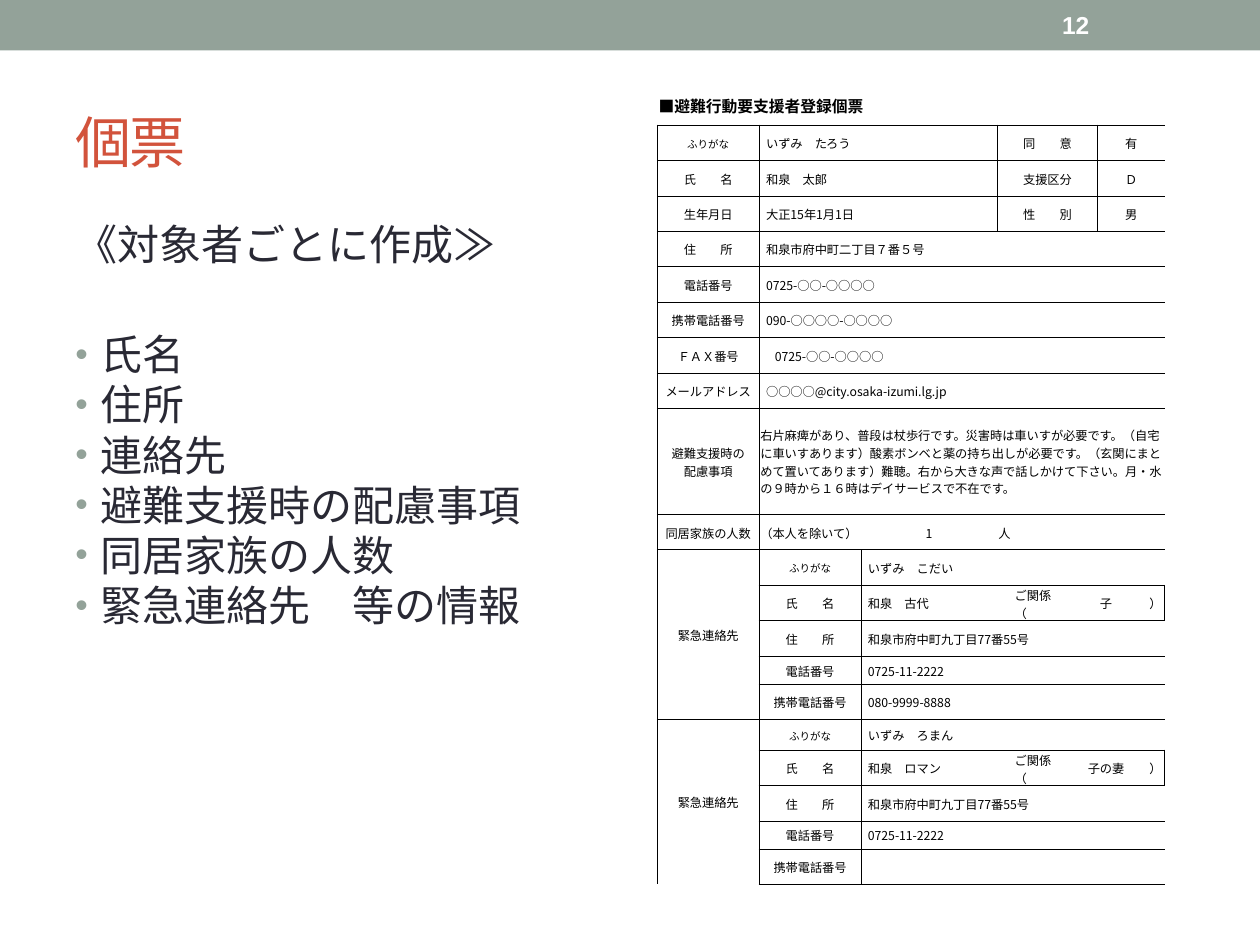
from copy import deepcopy
from dataclasses import dataclass, field
from typing import Any

from lxml import etree
from pptx import Presentation
from pptx.dml.color import RGBColor
from pptx.enum.shapes import MSO_SHAPE
from pptx.enum.text import MSO_ANCHOR, PP_ALIGN
from pptx.oxml.ns import qn
from pptx.util import Pt

RECTANGLE = MSO_SHAPE.RECTANGLE
TOP, MIDDLE = MSO_ANCHOR.TOP, MSO_ANCHOR.MIDDLE
LEFT, CENTER = PP_ALIGN.LEFT, PP_ALIGN.CENTER
SAGE = RGBColor(0x93, 0xA2, 0x99)
RUST = RGBColor(0xD2, 0x53, 0x3C)
INK = RGBColor(0x29, 0x29, 0x34)
BLACK = RGBColor(0x00, 0x00, 0x00)
WHITE = RGBColor(0xFF, 0xFF, 0xFF)
JAPANESE, LATIN = "Noto Sans CJK JP", "Arial"
NO_STYLE = "{2D5ABB26-0587-4C30-8999-92F81FD0307C}"

BODY_SIZE, TABLE_SIZE, SMALL_SIZE = 24, 7, 6
BODY_FORMAT = {"line_spacing": 0.83, "space_before": Pt(4.8)}
FIRST_FORMAT = BODY_FORMAT | {"space_before": Pt(0)}
GAP_FORMAT = BODY_FORMAT | {"space_before": Pt(39.3)}
BULLETS = ["氏名", "住所", "連絡先", "避難支援時の配慮事項", "同居家族の人数", "緊急連絡先　等の情報"]

COLUMNS = [58.2, 58.2, 77.8, 9.4, 28.8, 19.4, 28.8, 9.4]
ROW_HEIGHT = 20.25
SPECIAL_ROWS = {0: 22.5, 9: 60.6, 14: 16, 16: 17.5, 19: 16}
ROW_COUNT = 21
INSET, INDENT, WIDE_INDENT = 0.72, 4, 9
SIDES = "LRTB"


@dataclass
class Line:
    text: str
    size: float
    color: RGBColor
    face: str = JAPANESE
    bold: bool = False
    bullet: bool = False
    spacing: int = 0
    format: dict[str, Any] = field(default_factory=dict)


@dataclass
class Entry:
    row: int
    column: int
    text: str
    columns: int = 1
    rows: int = 1
    align: PP_ALIGN = CENTER
    size: float = TABLE_SIZE
    indent: float = INSET
    sides: str = SIDES
    bold: bool = False


def assign(target: Any, values: dict[str, Any]) -> None:
    for name, value in values.items():
        setattr(target, name, value)


def write(para: Any, line: Line) -> None:
    para.text = line.text
    assign(para, line.format)
    for span in para.runs:
        assign(span.font, {"size": Pt(line.size), "bold": line.bold, "name": line.face})
        span.font.color.rgb = line.color
        properties = span.font._element
        etree.SubElement(properties, qn("a:ea"), typeface=line.face)
        if line.spacing:
            properties.set("spc", str(line.spacing))
    for line_break in para._p.findall(qn("a:br")):
        line_break.append(deepcopy(para.runs[0].font._element))
    if line.bullet:
        add_bullet(para)


def add_bullet(para: Any) -> None:
    properties = para._p.get_or_add_pPr()
    properties.set("marL", str(Pt(14.4)))
    properties.set("indent", str(-Pt(14.4)))
    color = etree.SubElement(properties, qn("a:buClr"))
    etree.SubElement(color, qn("a:srgbClr"), val=str(SAGE))
    etree.SubElement(properties, qn("a:buSzPct"), val="85000")
    etree.SubElement(properties, qn("a:buFont"), typeface=LATIN)
    etree.SubElement(properties, qn("a:buChar"), char="•")


def add_text(page: Any, left: float, top: float, width: float, height: float,
             anchor: MSO_ANCHOR, lines: list[Line]) -> None:
    box = page.shapes.add_textbox(Pt(left), Pt(top), Pt(width), Pt(height))
    frame = box.text_frame
    assign(frame, {"word_wrap": True, "vertical_anchor": anchor})
    for index, line in enumerate(lines):
        write(frame.add_paragraph() if index else frame.paragraphs[0], line)


def add_bar(page: Any) -> None:
    bar = page.shapes.add_shape(RECTANGLE, Pt(0), Pt(0), Pt(720), Pt(28.8))
    bar.shadow.inherit = False
    bar.fill.solid()
    bar.fill.fore_color.rgb = SAGE
    bar.line.fill.background()


def set_borders(cell: Any, sides: str) -> None:
    properties = cell._tc.get_or_add_tcPr()
    for index, side in enumerate(SIDES):
        border = etree.Element(qn(f"a:ln{side}"), w=str(Pt(0.5)))
        if side in sides:
            fill = etree.SubElement(border, qn("a:solidFill"))
            etree.SubElement(fill, qn("a:srgbClr"), val=str(BLACK))
        else:
            etree.SubElement(border, qn("a:noFill"))
        properties.insert(index, border)


def fill_entry(table: Any, entry: Entry) -> None:
    last_row = entry.row + entry.rows - 1
    last_column = entry.column + entry.columns - 1
    for row in range(entry.row, last_row + 1):
        for column in range(entry.column, last_column + 1):
            at_edge = {"L": column == entry.column, "R": column == last_column,
                       "T": row == entry.row, "B": row == last_row}
            cell = table.cell(row, column)
            set_borders(cell, "".join(side for side in entry.sides if at_edge[side]))
    cell = table.cell(entry.row, entry.column)
    if entry.rows * entry.columns > 1:
        cell.merge(table.cell(last_row, last_column))
    cell.margin_left = Pt(entry.indent)
    if entry.text:
        write(cell.text_frame.paragraphs[0],
              Line(entry.text, entry.size, BLACK, bold=entry.bold, format={"alignment": entry.align}))


def value(row: int, column: int, text: str, columns: int, indent: float = INDENT, sides: str = SIDES) -> Entry:
    return Entry(row, column, text, columns, align=LEFT, indent=indent, sides=sides)


def contact(top: int, reading: str, name: str, relation: str, mobile: str) -> list[Entry]:
    labels = ["ふりがな", "氏　　名", "住　　所", "電話番号", "携帯電話番号"]
    answers = {0: reading, 2: "和泉市府中町九丁目77番55号", 3: "0725-11-2222", 4: mobile}
    return [
        Entry(top, 0, "緊急連絡先", rows=len(labels)),
        *[Entry(top + step, 1, label, size=TABLE_SIZE if step else SMALL_SIZE)
          for step, label in enumerate(labels)],
        *[value(top + step, 2, answer, 6) for step, answer in answers.items()],
        value(top + 1, 2, name, 2, sides="LTB"),
        value(top + 1, 4, "ご関係（", 1, INSET, "TB"),
        Entry(top + 1, 5, relation, 2, sides="TB"),
        value(top + 1, 7, "）", 1, INSET, "RTB"),
    ]


def form_entries() -> list[Entry]:
    labels = ["ふりがな", "氏　　名", "生年月日", "住　　所", "電話番号", "携帯電話番号",
              "ＦＡＸ番号", "メールアドレス", "避難支援時の\n配慮事項", "同居家族の人数"]
    person = [("いずみ　たろう", "同　　意", "有"), ("和泉　太郎", "支援区分", "Ｄ"),
              ("大正15年1月1日", "性　　別", "男")]
    care = ("右片麻痺があり、普段は杖歩行です。災害時は車いすが必要です。（自宅に車いすあります）"
            "酸素ボンベと薬の持ち出しが必要です。（玄関にまとめて置いてあります）難聴。"
            "右から大きな声で話しかけて下さい。月・水の９時から１６時はデイサービスで不在です。")
    answers = [("和泉市府中町二丁目７番５号", INDENT), ("0725-○○-○○○○", INDENT),
               ("090-○○○○-○○○○", INDENT), ("0725-○○-○○○○", WIDE_INDENT),
               ("○○○○@city.osaka-izumi.lg.jp", INDENT), (care, INSET)]
    entries = [Entry(0, 0, "■避難行動要支援者登録個票", 8, align=LEFT, size=9, sides="B", bold=True)]
    entries += [Entry(row, 0, label, size=SMALL_SIZE if row == 1 else TABLE_SIZE)
                for row, label in enumerate(labels, 1)]
    for row, (answer, label, mark) in enumerate(person, 1):
        entries += [value(row, 1, answer, 2), Entry(row, 3, label, 3), Entry(row, 6, mark, 2)]
    entries += [value(row, 1, text, 7, indent) for row, (text, indent) in enumerate(answers, 4)]
    entries += [value(10, 1, "（本人を除いて）", 1, INSET, "LTB"), Entry(10, 2, "1", sides="TB"),
                value(10, 3, "人", 5, INSET, "RTB")]
    entries += contact(11, "いずみ　こだい", "和泉　古代", "子", "080-9999-8888")
    return entries + contact(16, "いずみ　ろまん", "和泉　ロマン", "子の妻", "")


def add_form(page: Any) -> None:
    heights = [SPECIAL_ROWS.get(row, ROW_HEIGHT) for row in range(ROW_COUNT)]
    frame = page.shapes.add_table(ROW_COUNT, len(COLUMNS), Pt(375.6), Pt(49),
                                  Pt(sum(COLUMNS)), Pt(sum(heights)))
    table = frame.table
    assign(table, {"first_row": False, "horz_banding": False})
    table._tbl.tblPr.find(qn("a:tableStyleId")).text = NO_STYLE
    for column, width in zip(table.columns, COLUMNS):
        column.width = Pt(width)
    for row, height in zip(table.rows, heights):
        row.height = Pt(height)
    for cell in table.iter_cells():
        assign(cell, {"margin_left": Pt(INSET), "margin_right": Pt(INSET), "margin_top": Pt(INSET),
                      "margin_bottom": Pt(0), "vertical_anchor": MIDDLE})
        cell.fill.background()
        etree.SubElement(cell.text_frame.paragraphs[0]._p, qn("a:endParaRPr"), sz=str(TABLE_SIZE * 100))
    for entry in form_entries():
        fill_entry(table, entry)


def main() -> None:
    deck = Presentation()
    assign(deck, {"slide_width": Pt(720), "slide_height": Pt(540)})
    page = deck.slides.add_slide(deck.slide_layouts[6])
    add_bar(page)
    add_text(page, 36, 41.8, 648, 77.8, MIDDLE, [Line("個票", 32, RUST, spacing=-100)])
    body = [Line("《対象者ごとに作成≫", BODY_SIZE, INK, format=FIRST_FORMAT)]
    body += [Line(text, BODY_SIZE, INK, bullet=True, format=BODY_FORMAT if index else GAP_FORMAT)
             for index, text in enumerate(BULLETS)]
    add_text(page, 36, 126, 295.2, 383.8, TOP, body)
    add_text(page, 599.8, 1.4, 84.2, 25.9, MIDDLE, [Line("12", 14, WHITE, LATIN, bold=True)])
    add_form(page)
    deck.save("out.pptx")


if __name__ == "__main__":
    main()
